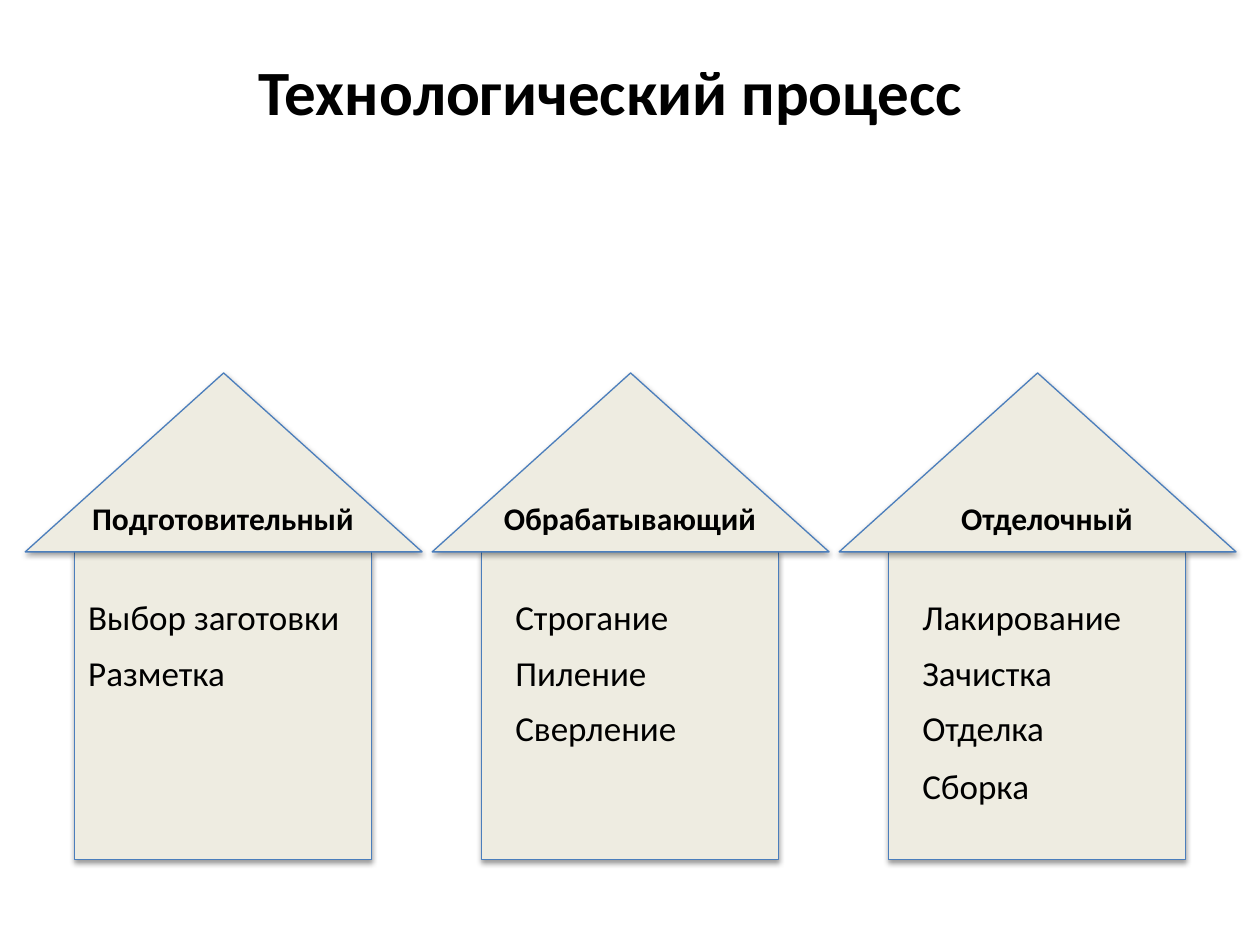
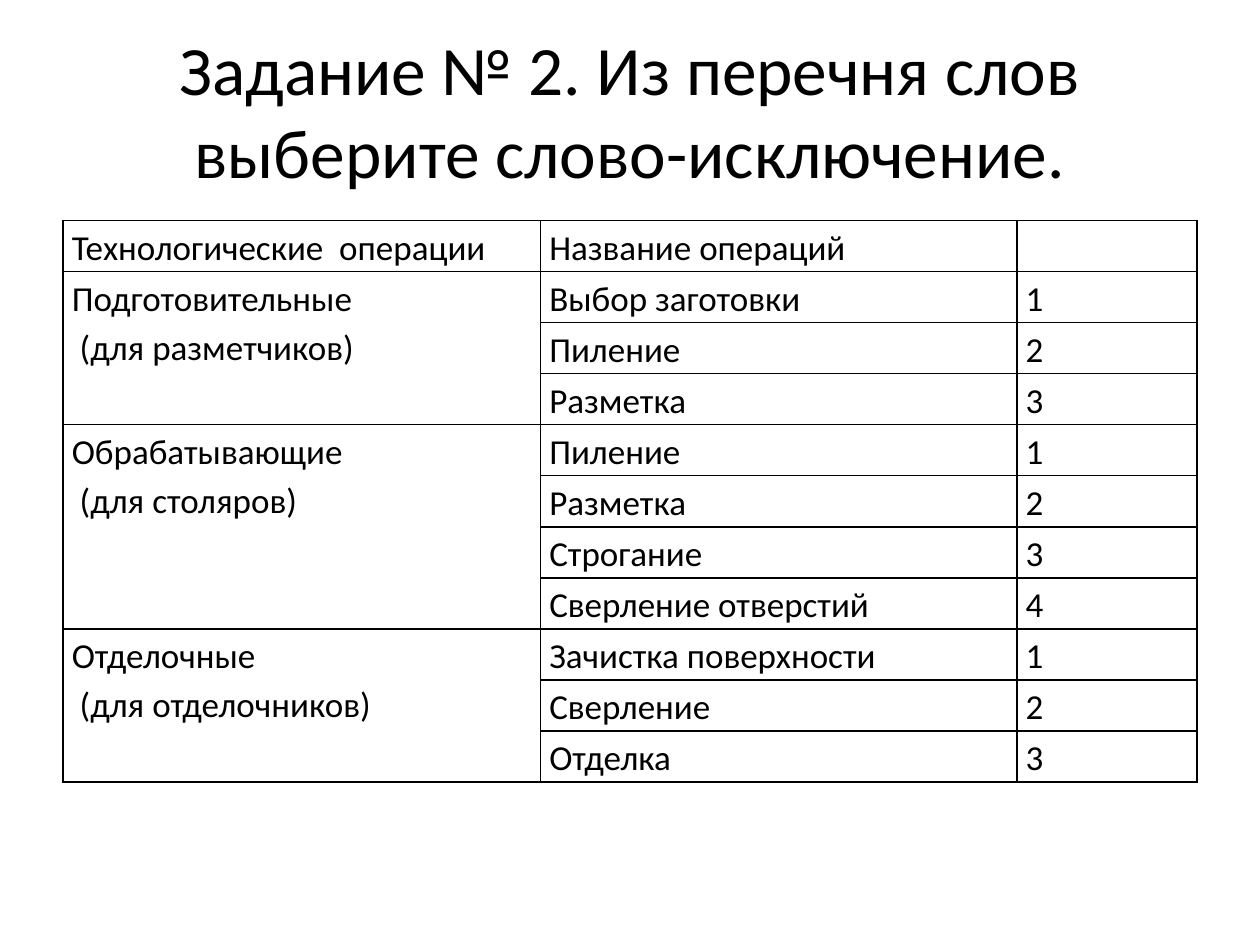
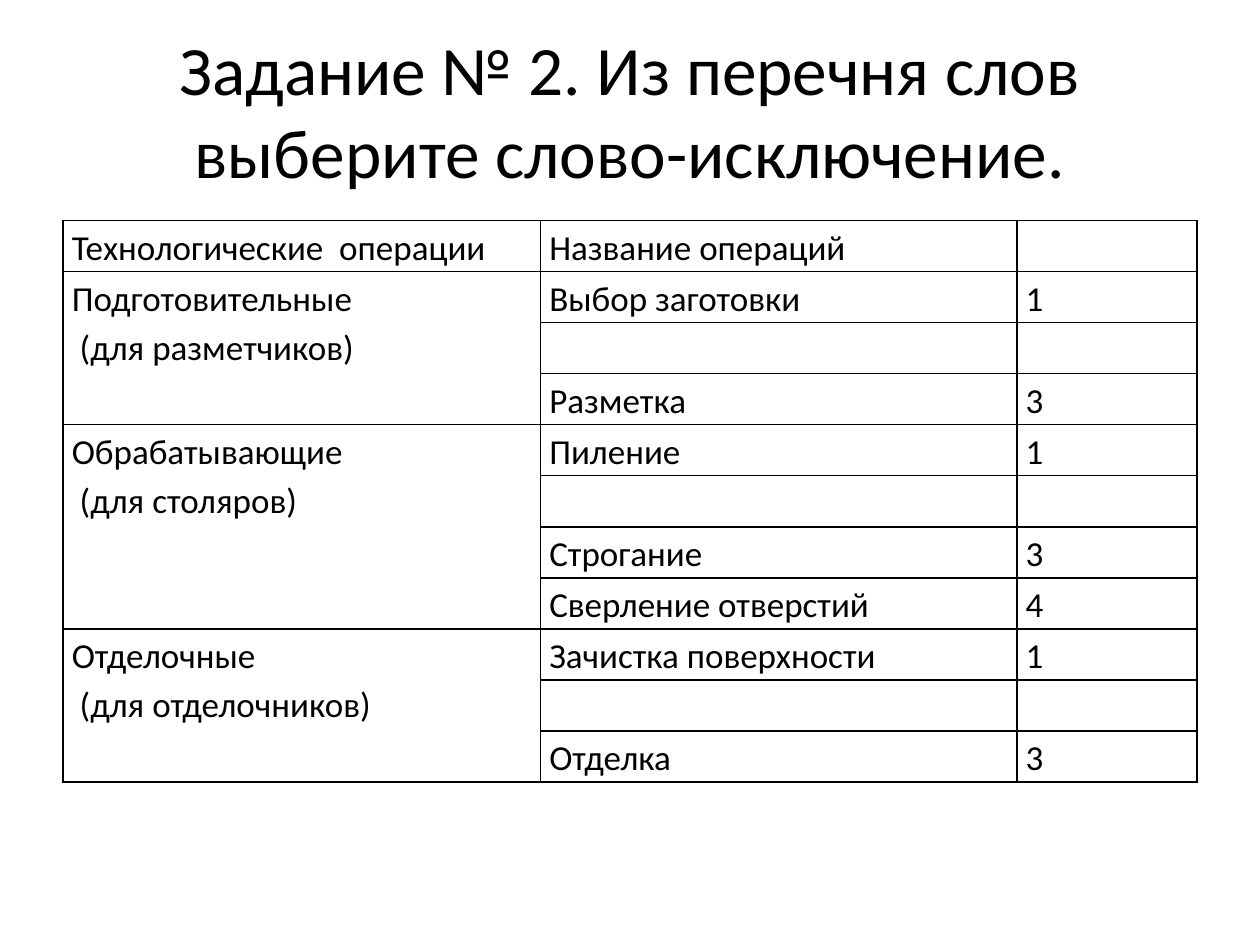
from lxml import etree
from pptx import Presentation
from pptx.dml.color import RGBColor
from pptx.enum.shapes import MSO_SHAPE
from pptx.enum.text import MSO_ANCHOR, MSO_AUTO_SIZE, PP_ALIGN
from pptx.oxml import parse_xml
from pptx.oxml.ns import nsdecls, qn
from pptx.util import Inches, Pt

FONT = "Calibri"
BLACK = "000000"
CREAM = "EEECE1"
BLUE = "4B7EBC"
NO_STYLE = "{2D5ABB26-0587-4C30-8999-92F81FD0307C}"
SHADOW = (f'<a:outerShdw {nsdecls("a")} blurRad="40000" dist="20000" dir="5400000" rotWithShape="0">'
          f'<a:srgbClr val="{BLACK}"><a:alpha val="38000"/></a:srgbClr></a:outerShdw>')


def write(tf, text, size=20, bold=False, align=PP_ALIGN.LEFT, spacing=None):
    """Fill a text frame, one paragraph per line of text."""
    tf.word_wrap = True
    for i, line in enumerate(text.split("\n")):
        p = tf.add_paragraph() if i else tf.paragraphs[0]
        p.alignment = align
        p.line_spacing = spacing
        r = p.add_run()
        r.text = line
        r.font.name = FONT
        r.font.size = Pt(size)
        r.font.bold = bold
        r.font.color.rgb = RGBColor.from_string(BLACK)


def add_plain_table(s, left, top, widths, heights):
    """Add a table without style or banding."""
    shape = s.shapes.add_table(len(heights), len(widths), Inches(left), Inches(top),
                               Inches(sum(widths)), Inches(sum(heights)))
    table = shape.table
    table.first_row = table.horz_banding = False
    table._tbl.tblPr.find(qn("a:tableStyleId")).text = NO_STYLE
    for column, width in zip(table.columns, widths):
        column.width = Inches(width)
    for row, height in zip(table.rows, heights):
        row.height = Inches(height)
    return table


prs = Presentation()
prs.slide_width, prs.slide_height = Inches(10), Inches(7.5)
title_only = prs.slide_layouts[5]

TASK = "Задание № 2. Из перечня слов выберите слово-исключение."
titles = [
    ("Технологический процесс", (1.54, 0.36, 6.61, 0.71), 36, True),
    (TASK, (0.5, 0.15, 9, 1.44), 39.6, False),
    (TASK, (0.5, 0.15, 9, 1.44), 39.6, False),
]
for text, box, size, bold in titles:
    title = prs.slides.add_slide(title_only).shapes.title
    title.left, title.top, title.width, title.height = map(Inches, box)
    tf = title.text_frame
    tf.auto_size = MSO_AUTO_SIZE.NONE
    tf.vertical_anchor = MSO_ANCHOR.MIDDLE
    write(tf, text, size=size, bold=bold, align=PP_ALIGN.CENTER)

# Slide 1: three houses, one per stage
s = prs.slides[0]
HOUSE_LEFT, HOUSE_STEP, WALL_WIDTH = 0.59, 3.23, 2.36
stages = [
    ("Подготовительный", HOUSE_LEFT, ["Выбор заготовки", "Разметка"]),
    ("Обрабатывающий", 3.82, ["Строгание", "Пиление", "Сверление"]),
    ("Отделочный", 7.13, ["Лакирование", "Зачистка", "Отделка", "Сборка"]),
]
for i in range(len(stages)):
    left = HOUSE_LEFT + i * HOUSE_STEP
    wall = (MSO_SHAPE.RECTANGLE, left, 4.38, WALL_WIDTH, 2.44)
    roof = (MSO_SHAPE.ISOSCELES_TRIANGLE, left - 0.39, 2.96, 3.15, 1.42)
    for kind, *box in (wall, roof):
        shape = s.shapes.add_shape(kind, *map(Inches, box))
        shape.fill.solid()
        shape.fill.fore_color.rgb = RGBColor.from_string(CREAM)
        shape.line.color.rgb = RGBColor.from_string(BLUE)
        shape.line.width = Pt(0.75)
        shape.shadow.inherit = False
        shape._element.spPr.find(qn("a:effectLst")).append(parse_xml(SHADOW))

table = add_plain_table(s, HOUSE_LEFT, 4.69, [3.39, 3.23, 3.94], [0.43, 0.43, 0.46, 0.46])
for cell in table.iter_cells():
    cell.fill.background()
for col, (name, left, operations) in enumerate(stages):
    for row, operation in enumerate(operations):
        cell = table.cell(row, col)
        cell.margin_left = cell.margin_right = Inches(0.11)
        write(cell.text_frame, operation)
    label = s.shapes.add_textbox(Inches(left), Inches(3.91), Inches(WALL_WIDTH), Inches(0.71))
    write(label.text_frame, name, size=18, bold=True, align=PP_ALIGN.CENTER)

# Slides 2 and 3: the task, then the answer with the odd words removed
groups = [
    ("Подготовительные\n (для разметчиков)", ["Выбор заготовки", "Пиление", "Разметка"]),
    ("Обрабатывающие\n (для столяров)",
     ["Пиление", "Разметка", "Строгание", "Сверление отверстий"]),
    ("Отделочные\n (для отделочников)", ["Зачистка поверхности", "Сверление", "Отделка"]),
]
ODD_NUMBER = 2
for s, show_odd in ((prs.slides[1], True), (prs.slides[2], False)):
    table = add_plain_table(s, 0.5, 1.75, [3.79, 3.78, 1.43], [4.46 / 11] * 11)
    for cell in table.iter_cells():
        cell.margin_left = cell.margin_right = Inches(0.07)
        cell.margin_top = cell.margin_bottom = 0
        tcPr = cell._tc.get_or_add_tcPr()
        for side in ("a:lnL", "a:lnR", "a:lnT", "a:lnB"):
            line = etree.SubElement(tcPr, qn(side), w=str(Pt(1)))
            fill = etree.SubElement(line, qn("a:solidFill"))
            etree.SubElement(fill, qn("a:srgbClr"), val=BLACK)
        cell.fill.background()

    texts = {(0, 0): "Технологические  операции", (0, 1): "Название операций"}
    row = 1
    for name, operations in groups:
        table.cell(row, 0).merge(table.cell(row + len(operations) - 1, 0))
        texts[row, 0] = name
        for number, operation in enumerate(operations, 1):
            if show_odd or number != ODD_NUMBER:
                texts[row, 1] = operation
                texts[row, 2] = str(number)
            row += 1
    for (row, col), text in texts.items():
        write(table.cell(row, col).text_frame, text, spacing=1.15)

prs.save("out.pptx")
